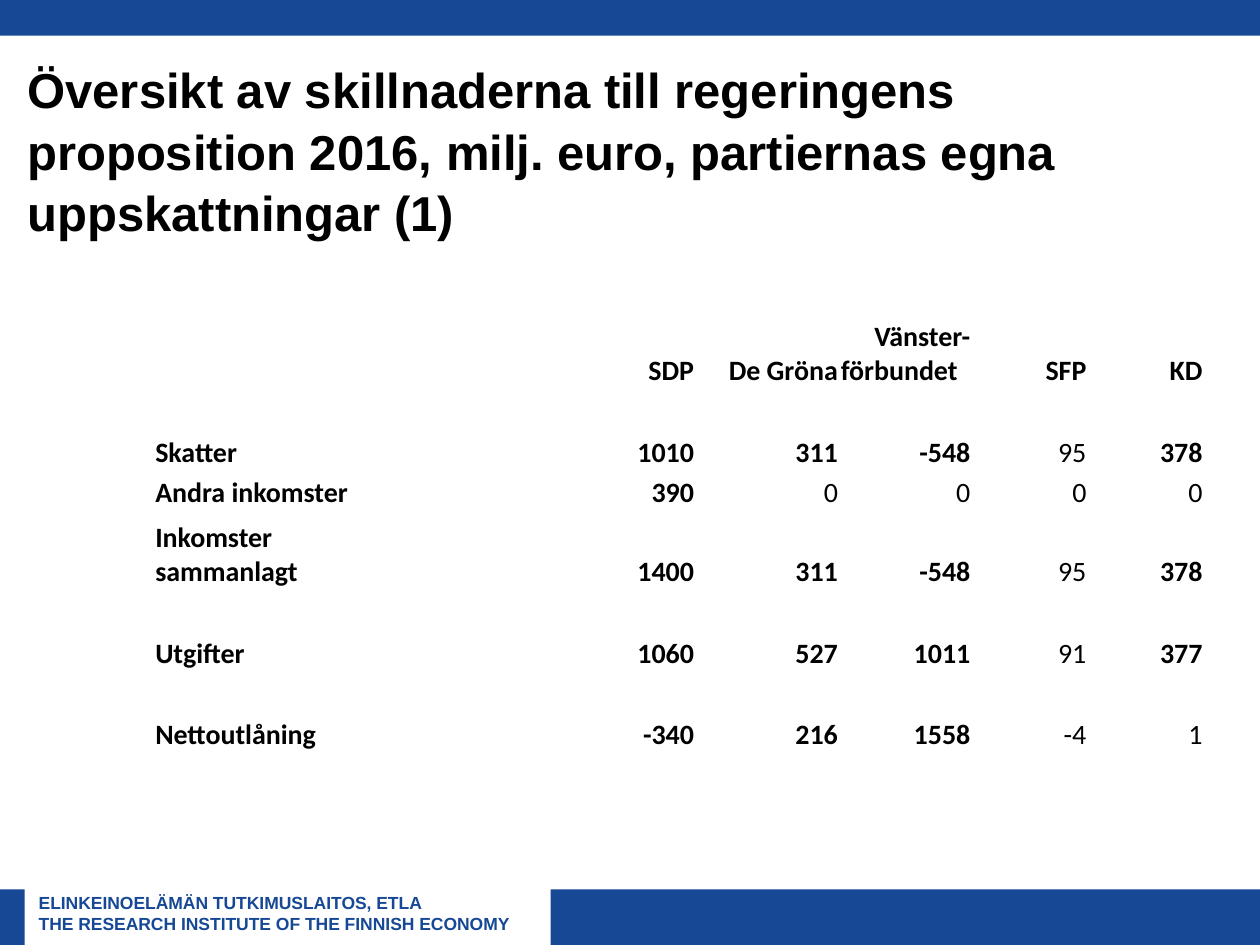
from dataclasses import dataclass

import pptx
import pptx.dml.color
import pptx.enum.shapes
import pptx.enum.text
import pptx.util
from pptx.util import Cm

ALIGN = pptx.enum.text.PP_ALIGN
ANCHOR = pptx.enum.text.MSO_ANCHOR


@dataclass(frozen=True)
class Theme:
    blue: str = "164895"
    black: str = "000000"
    heading_font: str = "Arial"
    table_font: str = "Calibri"
    title_size: int = 28
    table_size: int = 16
    footer_size: int = 10


THEME = Theme()

SLIDE_WIDTH, SLIDE_HEIGHT = 25.4, 19.05
FOOTER_TOP = 17.93
FOOTER_HEIGHT = SLIDE_HEIGHT - FOOTER_TOP

TITLE = ("Översikt av skillnaderna till regeringens proposition 2016, "
         "milj. euro, partiernas egna uppskattningar (1)")
FOOTER_LINES = ["ELINKEINOELÄMÄN TUTKIMUSLAITOS, ETLA",
                "THE RESEARCH INSTITUTE OF THE FINNISH ECONOMY"]

COLUMN_WIDTHS = [2.34, 2.34, 3.12, 3.12, 2.9, 2.67, 2.34, 2.34]
FIRST_VALUE_COLUMN = 3
HEADER_HEIGHT, ROW_HEIGHT, TALL_ROW_HEIGHT = 2.11, 0.82, 1.59
PARTIES = ["SDP", "De Gröna", "Vänster-\nförbundet", "SFP", "KD"]

# Label, values, and how many values in a row are regular; None is a spacer row.
BUDGET_ROWS = [
    None,
    ("Skatter", [1010, 311, -548, 95, 378], {3}),
    ("Andra inkomster", [390, 0, 0, 0, 0], {1, 2, 3, 4}),
    ("Inkomster sammanlagt", [1400, 311, -548, 95, 378], {3}),
    None,
    ("Utgifter", [1060, 527, 1011, 91, 377], {3}),
    None,
    ("Nettoutlåning", [-340, 216, 1558, -4, 1], {3, 4}),
]


def add_run(paragraph, text, font_name, size, color, bold=True):
    run = paragraph.add_run()
    run.text = text
    run.font.name = font_name
    run.font.size = pptx.util.Pt(size)
    run.font.bold = bold
    run.font.color.rgb = pptx.dml.color.RGBColor.from_string(color)


def add_bar(slide, left, top, width, height):
    bar = slide.shapes.add_shape(pptx.enum.shapes.MSO_SHAPE.RECTANGLE,
                                 Cm(left), Cm(top), Cm(width), Cm(height))
    bar.shadow.inherit = False
    bar.fill.solid()
    bar.fill.fore_color.rgb = pptx.dml.color.RGBColor.from_string(THEME.blue)
    bar.line.fill.background()


def add_footer_text(slide):
    box = slide.shapes.add_textbox(Cm(0.53), Cm(17.86), Cm(10.59), Cm(1.09))
    frame = box.text_frame
    frame.word_wrap = True
    for index, line in enumerate(FOOTER_LINES):
        paragraph = frame.add_paragraph() if index else frame.paragraphs[0]
        add_run(paragraph, line, THEME.heading_font, THEME.footer_size, THEME.blue)


def format_title(slide):
    title = slide.shapes.title
    title.left, title.top, title.width, title.height = (
        Cm(0.3), Cm(0.91), Cm(21.41), Cm(4.19))
    frame = title.text_frame
    frame.word_wrap = True
    frame.auto_size = pptx.enum.text.MSO_AUTO_SIZE.NONE
    frame.vertical_anchor = ANCHOR.MIDDLE
    paragraph = frame.paragraphs[0]
    paragraph.alignment = ALIGN.LEFT
    paragraph.line_spacing = 1.05
    add_run(paragraph, TITLE, THEME.heading_font, THEME.title_size, THEME.black)


def write_cell(cell, text, alignment=ALIGN.RIGHT, bold=True):
    """Write one paragraph per line; lines after the first start at the left."""
    frame = cell.text_frame
    for index, line in enumerate(text.split("\n")):
        paragraph = frame.add_paragraph() if index else frame.paragraphs[0]
        paragraph.alignment = ALIGN.LEFT if index else alignment
        add_run(paragraph, line, THEME.table_font, THEME.table_size,
                THEME.black, bold)


def add_plain_table(slide, row_heights):
    """Add a table without banding, fills or wide cell margins."""
    table = slide.shapes.add_table(
        len(row_heights), len(COLUMN_WIDTHS), Cm(3.1), Cm(5.72),
        Cm(sum(COLUMN_WIDTHS)), Cm(sum(row_heights))).table
    table.first_row = table.horz_banding = False
    for column, width in zip(table.columns, COLUMN_WIDTHS):
        column.width = Cm(width)
    for row, height in zip(table.rows, row_heights):
        row.height = Cm(height)
    for cell in table.iter_cells():
        cell.fill.background()
        cell.margin_left = cell.margin_right = cell.margin_top = Cm(0.03)
        cell.margin_bottom = 0
        cell.vertical_anchor = ANCHOR.BOTTOM
    return table


def add_budget_table(slide):
    row_heights = [HEADER_HEIGHT] + [
        TALL_ROW_HEIGHT if row and row[0] == "Inkomster sammanlagt" else ROW_HEIGHT
        for row in BUDGET_ROWS]
    table = add_plain_table(slide, row_heights)
    for column, party in enumerate(PARTIES, FIRST_VALUE_COLUMN):
        write_cell(table.cell(0, column), party)
    for row_index, row in enumerate(BUDGET_ROWS, 1):
        if row is None:
            continue
        label, values, regular = row
        label_cell = table.cell(row_index, 0)
        if len(label) > len("Utgifter"):
            label_cell.merge(table.cell(row_index, 1))
        write_cell(label_cell, label, ALIGN.LEFT)
        for index, value in enumerate(values):
            write_cell(table.cell(row_index, FIRST_VALUE_COLUMN + index),
                       str(value), bold=index not in regular)


def main():
    presentation = pptx.Presentation()
    presentation.slide_width = Cm(SLIDE_WIDTH)
    presentation.slide_height = Cm(SLIDE_HEIGHT)
    slide = presentation.slides.add_slide(
        presentation.slide_layouts.get_by_name("Title Only"))
    add_bar(slide, 0, 0, SLIDE_WIDTH, 0.72)
    add_bar(slide, 0, FOOTER_TOP, 0.5, FOOTER_HEIGHT)
    add_bar(slide, 11.1, FOOTER_TOP, SLIDE_WIDTH - 11.1, FOOTER_HEIGHT)
    add_footer_text(slide)
    format_title(slide)
    add_budget_table(slide)
    presentation.save("out.pptx")


if __name__ == "__main__":
    main()
